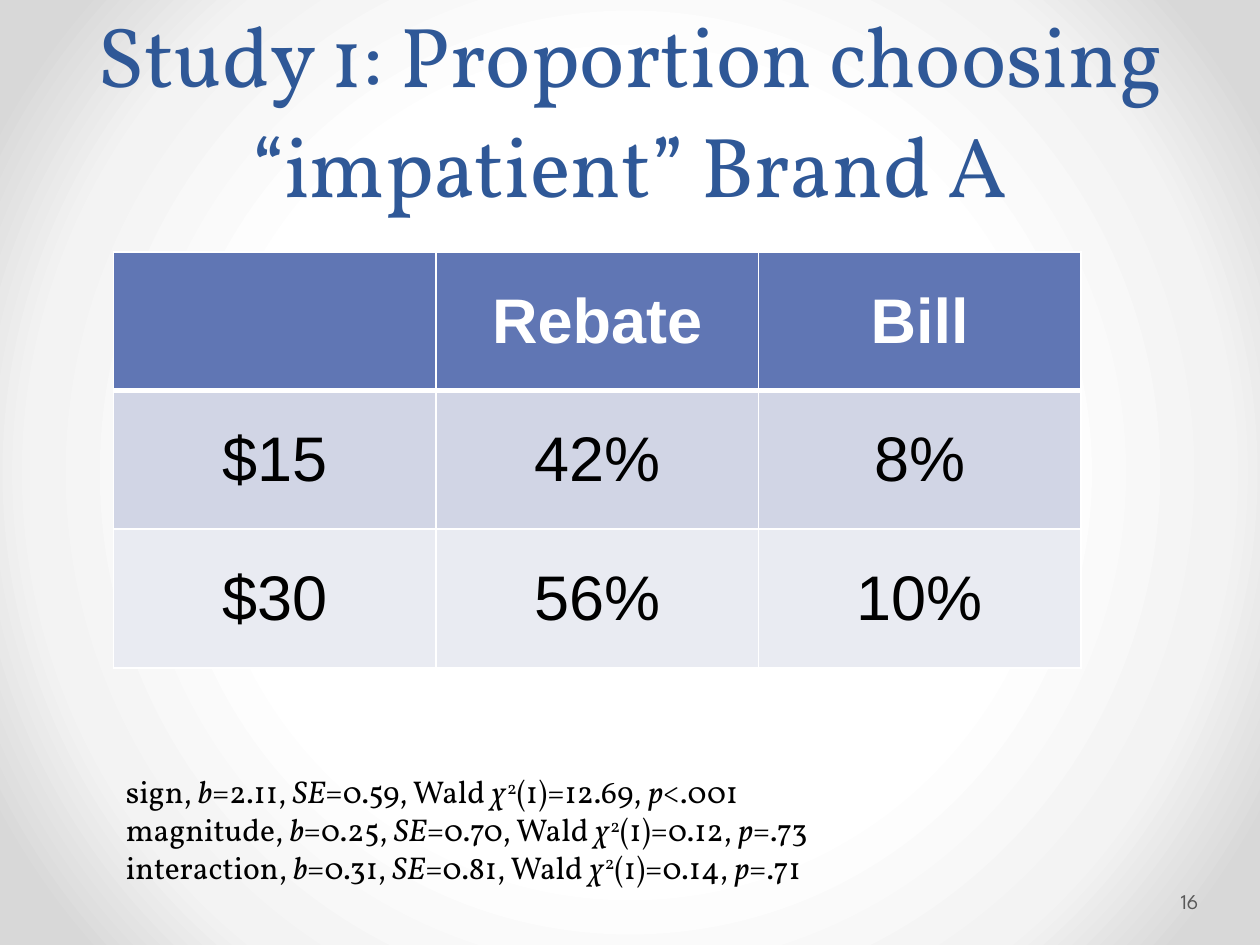
from dataclasses import dataclass

from lxml.etree import SubElement
from pptx import Presentation
from pptx.dml.color import RGBColor as RGB
from pptx.enum.text import MSO_ANCHOR as Anchor, MSO_AUTO_SIZE as AutoSize, PP_ALIGN as Align
from pptx.oxml import parse_xml
from pptx.oxml.ns import nsdecls, qn
from pptx.util import Inches, Pt

HEADING = "Study 1: Proportion choosing “impatient” Brand A"
PROPORTIONS = [
    ("", "Rebate", "Bill"),
    ("$15", "42%", "8%"),
    ("$30", "56%", "10%"),
]
EFFECTS = [
    ("sign", "2.11", "0.59", "12.69", "<.001"),
    ("magnitude", "0.25", "0.70", "0.12", "=.73"),
    ("interaction", "0.31", "0.81", "0.14", "=.71"),
]
PAGE = "16"


@dataclass(frozen=True)
class Theme:
    serif: str = "Vollkorn"
    sans: str = "Arial"
    folio: str = "League Spartan"
    heading: str = "2F5897"
    ink: str = "000000"
    muted: str = "595959"
    white: str = "FFFFFF"
    rows: tuple = ("6076B4", "D1D5E5", "E9EBF2")
    glow: tuple = ((0, "FFFFFF"), (50, "FFFFFF"), (76, "F3F3F3"), (92, "D8D8D8"), (100, "D8D8D8"))
    heading_size: float = 48.6
    table_size: int = 36
    stats_size: int = 18
    folio_size: int = 12


THEME = Theme()
WIDTH, HEIGHT = 10, 7.5
LEFT = 0.09 * WIDTH
COLUMN, ROW = 2.56, 1.1


def style(run, font, size, color, bold=False, italic=False):
    run.font.name, run.font.size = font, Pt(size)
    run.font.color.rgb = RGB.from_string(color)
    run.font.bold, run.font.italic = bold, italic


def paint_background(slide):
    stops = "".join(
        f'<a:gs pos="{share * 1000}"><a:srgbClr val="{color}"/></a:gs>'
        for share, color in THEME.glow
    )
    background = parse_xml(
        f'<p:bg {nsdecls("p", "a")}><p:bgPr><a:gradFill rotWithShape="1">'
        f'<a:gsLst>{stops}</a:gsLst><a:path path="circle">'
        '<a:fillToRect l="50000" t="50000" r="50000" b="50000"/></a:path>'
        "</a:gradFill><a:effectLst/></p:bgPr></p:bg>"
    )
    slide.element.cSld.insert(0, background)


def add_heading(slide):
    title = slide.shapes.title
    title.left, title.top = Inches(0.05 * WIDTH), 0
    title.width, title.height = Inches(0.9 * WIDTH), Inches(1.75)
    frame = title.text_frame
    frame.text = HEADING
    frame.word_wrap, frame.auto_size = True, AutoSize.NONE
    frame.vertical_anchor = Anchor.BOTTOM
    line = frame.paragraphs[0]
    line.alignment, line.line_spacing = Align.CENTER, 1.07
    style(line.runs[0], THEME.serif, THEME.heading_size, THEME.heading)


def add_borders(cell, header):
    properties = cell._tc.get_or_add_tcPr()
    for position, side in enumerate(("lnL", "lnR", "lnT", "lnB")):
        weight = 3 if header and side == "lnB" else 1
        border = properties.makeelement(qn(f"a:{side}"), {"w": str(Pt(weight))})
        fill = SubElement(border, qn("a:solidFill"))
        SubElement(fill, qn("a:srgbClr"), val=THEME.white)
        properties.insert(position, border)


def add_proportions(slide):
    row_count, column_count = len(PROPORTIONS), len(PROPORTIONS[0])
    table = slide.shapes.add_table(
        row_count, column_count, Inches(LEFT), Inches(2),
        Inches(COLUMN * column_count), Inches(ROW * row_count),
    ).table
    for r, values in enumerate(PROPORTIONS):
        header = r == 0
        for c, value in enumerate(values):
            cell = table.cell(r, c)
            cell.text = value
            cell.vertical_anchor = Anchor.MIDDLE
            cell.fill.solid()
            cell.fill.fore_color.rgb = RGB.from_string(THEME.rows[r])
            add_borders(cell, header or r == 1 and False)
            line = cell.text_frame.paragraphs[0]
            line.alignment = Align.CENTER
            for run in line.runs:
                style(run, THEME.sans, THEME.table_size,
                      THEME.white if header else THEME.ink, bold=header)


def add_statistics(slide):
    frame = slide.shapes.add_textbox(
        Inches(LEFT), Inches(6.08), Inches(8.08), Inches(1.01)
    ).text_frame
    frame.word_wrap, frame.auto_size = True, AutoSize.SHAPE_TO_FIT_TEXT
    for index, (effect, slope, error, wald, p_value) in enumerate(EFFECTS):
        line = frame.add_paragraph() if index else frame.paragraphs[0]
        pieces = (f"{effect}, ", "b", f"={slope}, ", "SE", f"={error}, Wald ",
                  "χ", "2", f"(1)={wald}, ", "p", p_value)
        for piece in pieces:
            run = line.add_run()
            run.text = piece
            style(run, THEME.serif, THEME.stats_size, THEME.ink,
                  italic=piece in ("b", "SE", "χ", "p"))
            if piece == "2":
                run.font._element.set("baseline", "30000")


def add_page(slide):
    frame = slide.shapes.add_textbox(
        Inches(9.34), Inches(6.95), Inches(0.61), Inches(0.4)
    ).text_frame
    frame.text = PAGE
    frame.word_wrap, frame.margin_left, frame.margin_right = True, Inches(0.03), Inches(0.05)
    frame.vertical_anchor = Anchor.MIDDLE
    style(frame.paragraphs[0].runs[0], THEME.folio, THEME.folio_size, THEME.muted)


def main():
    deck = Presentation()
    deck.slide_width, deck.slide_height = Inches(WIDTH), Inches(HEIGHT)
    slide = deck.slides.add_slide(deck.slide_layouts[5])
    paint_background(slide)
    add_heading(slide)
    add_page(slide)
    add_proportions(slide)
    add_statistics(slide)
    deck.save("out.pptx")


if __name__ == "__main__":
    main()
